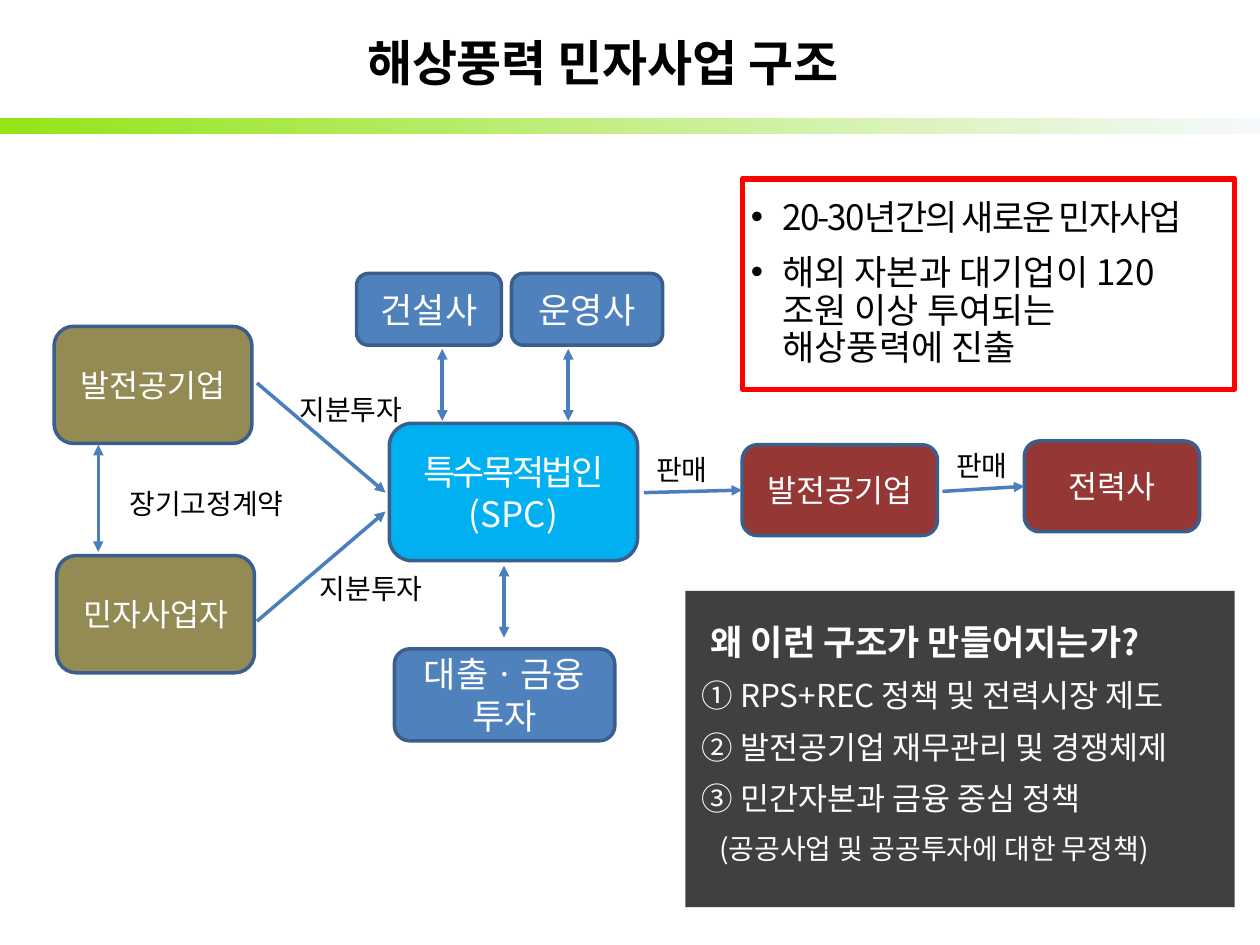
from dataclasses import dataclass

from lxml.etree import SubElement
from pptx import Presentation
from pptx.dml.color import RGBColor
from pptx.enum.shapes import MSO_CONNECTOR, MSO_SHAPE
from pptx.enum.text import MSO_ANCHOR, MSO_AUTO_SIZE, PP_ALIGN
from pptx.oxml.ns import qn
from pptx.util import Inches, Pt


@dataclass(frozen=True)
class Theme:
    black: str = "000000"
    white: str = "FFFFFF"
    investor: str = "948A54"
    company: str = "00B0F0"
    partner: str = "4F81BD"
    buyer: str = "953735"
    outline: str = "3A5F8C"
    arrow: str = "4B7EBC"
    alert: str = "FF0000"
    panel: str = "404040"
    bar_start: str = "94E417"
    bar_end: str = "F6F9FC"
    title_font: str = "Calibri"
    text_font: str = "Noto Sans CJK KR"
    title: int = 28
    large: int = 20
    medium: int = 18
    small: int = 16
    line: int = 2


THEME = Theme()


def color(code):
    return RGBColor.from_string(code)


def add_run(paragraph, text, size, ink, bold=False, spacing=0, font=THEME.text_font):
    run = paragraph.add_run()
    run.text = text
    run.font.size = Pt(size)
    run.font.bold = bold
    run.font.color.rgb = color(ink)
    run.font.name = font
    properties = run._r.get_or_add_rPr()
    SubElement(properties, qn("a:ea")).set("typeface", font)
    if spacing:
        properties.set("spc", str(int(spacing * 100)))


def add_lines(frame, count):
    return [frame.paragraphs[0]] + [frame.add_paragraph() for _ in range(count - 1)]


def set_spacing(paragraph, before, indent, hanging=0):
    paragraph.line_spacing = 0.9
    paragraph.space_before = Pt(before)
    properties = paragraph._p.get_or_add_pPr()
    properties.set("marL", str(Inches(indent)))
    properties.set("indent", str(Inches(-hanging)))


def set_insets(frame, top=0.04, right=0.07):
    frame.word_wrap = True
    frame.margin_left, frame.margin_right = Inches(0.07), Inches(right)
    frame.margin_top, frame.margin_bottom = Inches(top), Inches(0.04)


def place(shape, left, top, width, height):
    shape.left, shape.top = Inches(left), Inches(top)
    shape.width, shape.height = Inches(width), Inches(height)


def add_title(slide, text):
    title = slide.shapes.title
    place(title, 0.28, 0.13, 9.01, 0.72)
    title.text_frame.vertical_anchor = MSO_ANCHOR.MIDDLE
    heading = title.text_frame.paragraphs[0]
    heading.alignment = PP_ALIGN.CENTER
    add_run(heading, text, THEME.title, THEME.black, bold=True, font=THEME.title_font)


def add_box(slide, preset, left, top, width, height):
    box = slide.shapes.add_shape(
        preset, Inches(left), Inches(top), Inches(width), Inches(height))
    box.shadow.inherit = False
    box.line.fill.background()
    return box


def add_title_bar(slide):
    bar = add_box(slide, MSO_SHAPE.RECTANGLE, 0, 0.94, 10, 0.12)
    bar.fill.gradient()
    bar.fill.gradient_angle = 0
    for stop, code in zip(bar.fill.gradient_stops, (THEME.bar_start, THEME.bar_end)):
        stop.color.rgb = color(code)


def add_node(slide, bounds, fill, size, *lines):
    node = add_box(slide, MSO_SHAPE.ROUNDED_RECTANGLE, *bounds)
    node.fill.solid()
    node.fill.fore_color.rgb = color(fill)
    node.line.color.rgb = color(THEME.outline)
    node.line.width = Pt(THEME.line)
    frame = node.text_frame
    frame.word_wrap = True
    frame.vertical_anchor = MSO_ANCHOR.MIDDLE
    for paragraph, (text, spacing) in zip(add_lines(frame, len(lines)), lines):
        paragraph.alignment = PP_ALIGN.CENTER
        add_run(paragraph, text, size, THEME.white, spacing=spacing)
    return node


def add_arrow(slide, start, end, both=False, target=None):
    arrow = slide.shapes.add_connector(
        MSO_CONNECTOR.STRAIGHT, *(Inches(value) for value in start + end))
    if target is not None:
        arrow.end_connect(target, 1)
    arrow.line.color.rgb = color(THEME.arrow)
    arrow.line.width = Pt(THEME.line)
    outline = arrow.line._get_or_add_ln()
    for tag in ("a:headEnd", "a:tailEnd") if both else ("a:tailEnd",):
        SubElement(outline, qn(tag)).set("type", "triangle")
    SubElement(arrow._element.spPr, qn("a:effectLst"))


def add_label(slide, text, left, top, width):
    label = slide.shapes.add_textbox(
        Inches(left), Inches(top), Inches(width), Inches(0.37))
    label.text_frame.word_wrap = True
    label.text_frame.auto_size = MSO_AUTO_SIZE.SHAPE_TO_FIT_TEXT
    add_run(label.text_frame.paragraphs[0], text, THEME.small, THEME.black)


def add_summary(slide, points):
    summary = slide.placeholders[1]
    place(summary, 5.89, 1.42, 3.91, 1.67)
    summary.line.color.rgb = color(THEME.alert)
    summary.line.width = Pt(3)
    frame = summary.text_frame
    set_insets(frame, right=0.16)
    frame.auto_size = MSO_AUTO_SIZE.NONE
    frame.vertical_anchor = MSO_ANCHOR.MIDDLE
    for paragraph, (text, spacing) in zip(add_lines(frame, len(points)), points):
        set_spacing(paragraph, 10, 0.25, 0.25)
        bullet = paragraph._p.get_or_add_pPr()
        SubElement(bullet, qn("a:buFont")).set("typeface", "Arial")
        SubElement(bullet, qn("a:buChar")).set("char", "•")
        add_run(paragraph, text, THEME.large, THEME.black, spacing=spacing)


def add_reasons(slide, question, reasons, remark):
    panel = add_box(slide, MSO_SHAPE.RECTANGLE, 5.44, 4.69, 4.36, 2.51)
    panel.fill.solid()
    panel.fill.fore_color.rgb = color(THEME.panel)
    frame = panel.text_frame
    set_insets(frame, top=0.27)
    frame.vertical_anchor = MSO_ANCHOR.TOP
    rows = [(question, THEME.large, 0.13)]
    rows += [(reason, THEME.medium, 0.06) for reason in reasons]
    rows.append((remark, THEME.small, 0.2))
    for index, paragraph in enumerate(add_lines(frame, len(rows))):
        text, size, indent = rows[index]
        paragraph.alignment = PP_ALIGN.LEFT
        set_spacing(paragraph, 10 if index else 0, indent)
        add_run(paragraph, text, size, THEME.white, bold=index == 0)


def add_structure(slide):
    large, medium = THEME.large, THEME.medium
    add_node(slide, (0.45, 4.41, 1.57, 0.93), THEME.investor, medium, ("민자사업자", 0))
    add_node(slide, (0.43, 2.59, 1.57, 0.93), THEME.investor, medium, ("발전공기업", 0))
    add_node(slide, (3.09, 3.36, 1.97, 1.09), THEME.company, large,
             ("특수목적법인", -1.5), ("(SPC)", 0))
    add_node(slide, (2.83, 2.17, 1.15, 0.57), THEME.partner, large, ("건설사", 0))
    add_node(slide, (4.06, 2.17, 1.2, 0.57), THEME.partner, large, ("운영사", 0))
    add_node(slide, (3.13, 5.15, 1.75, 0.73), THEME.partner, large, ("대출ㆍ금융투자", 0))
    generator = add_node(
        slide, (5.89, 3.53, 1.55, 0.72), THEME.buyer, medium, ("발전공기업", 0))
    utility = add_node(slide, (8.13, 3.5, 1.39, 0.72), THEME.buyer, medium, ("전력사", 0))

    for x, top, bottom in ((0.78, 3.53, 4.38), (3.51, 2.77, 3.34),
                           (4.51, 2.77, 3.34), (4, 4.49, 5.06)):
        add_arrow(slide, (x, top), (x, bottom), both=True)
    add_arrow(slide, (2.04, 3.04), (3.06, 3.91))
    add_arrow(slide, (2.04, 4.93), (3.06, 4.06))
    add_arrow(slide, (5.11, 3.91), (5.89, 3.91), target=generator)
    add_arrow(slide, (7.48, 3.9), (8.13, 3.88), target=utility)

    for label in (("장기고정계약", 0.93, 3.81, 1.79), ("지분투자", 2.28, 3.07, 1.27),
                  ("지분투자", 2.44, 4.49, 1.27), ("판매", 5.11, 3.54, 0.7),
                  ("판매", 7.49, 3.51, 0.7)):
        add_label(slide, *label)


def main():
    deck = Presentation()
    deck.slide_width, deck.slide_height = Inches(10), Inches(7.5)
    slide = deck.slides.add_slide(deck.slide_layouts[1])
    add_title_bar(slide)
    add_title(slide, "해상풍력 민자사업 구조")
    add_structure(slide)
    add_summary(slide, (("20-30년간의 새로운 민자사업", -1.1),
                        ("해외 자본과 대기업이 120조원 이상 투여되는 해상풍력에 진출", 0)))
    add_reasons(slide, "왜 이런 구조가 만들어지는가?",
                ("① RPS+REC 정책 및 전력시장 제도",
                 "② 발전공기업 재무관리 및 경쟁체제",
                 "③ 민간자본과 금융 중심 정책"),
                "(공공사업 및 공공투자에 대한 무정책)")
    deck.save("out.pptx")


if __name__ == "__main__":
    main()
